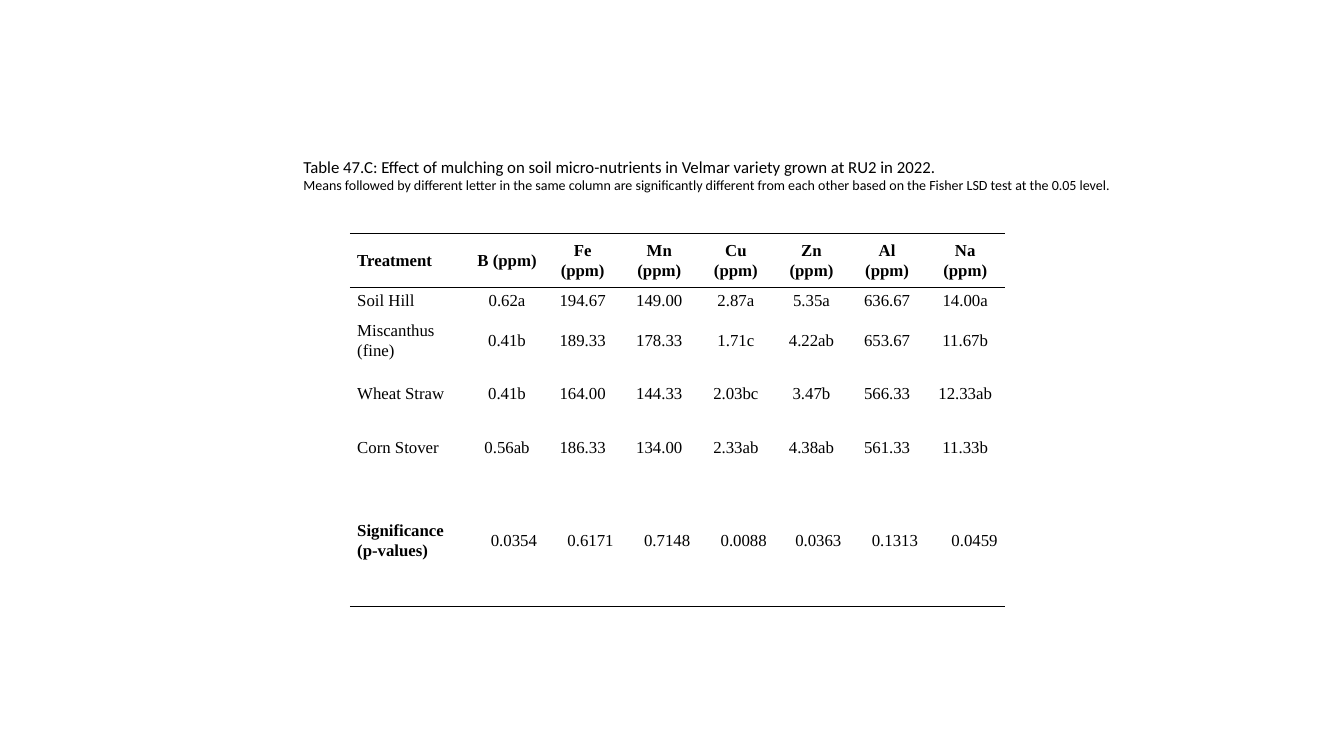
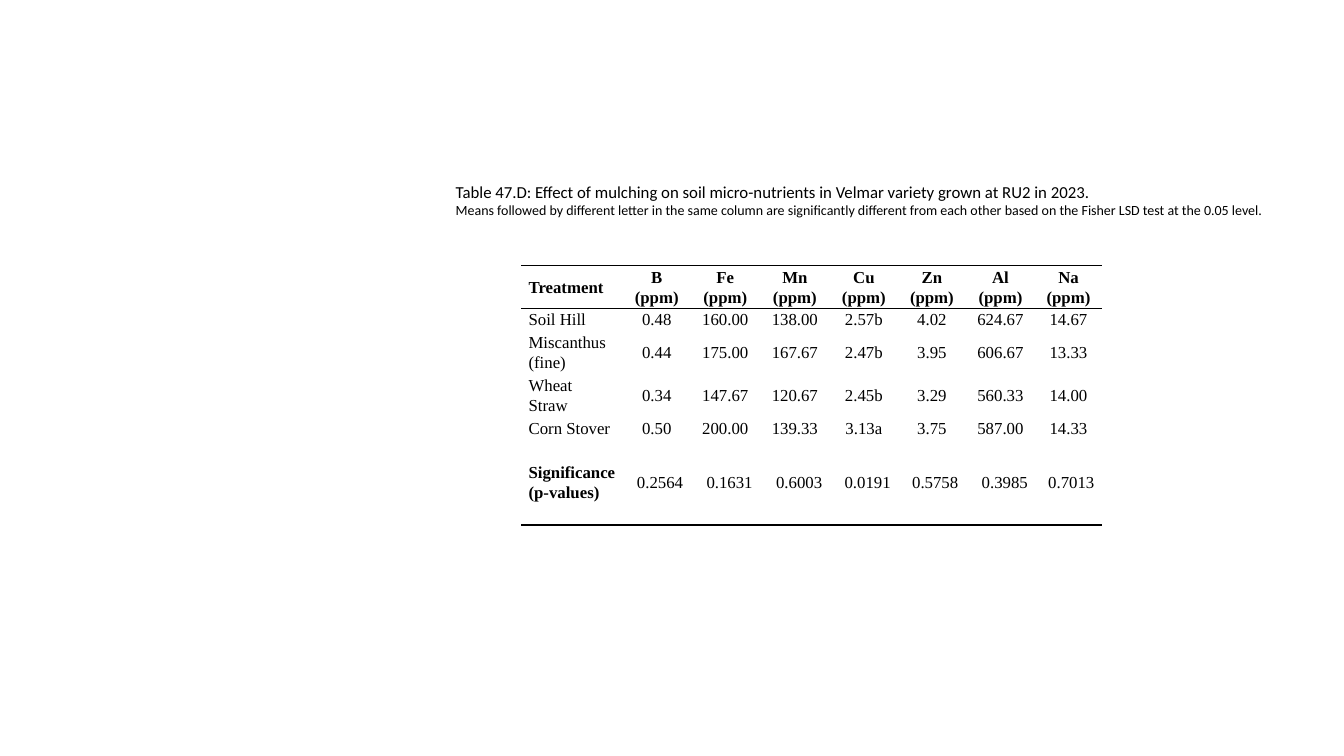
from dataclasses import dataclass

from lxml import etree
from pptx import Presentation
from pptx.dml.color import RGBColor
from pptx.enum.text import MSO_ANCHOR, MSO_AUTO_SIZE, PP_ALIGN
from pptx.oxml.ns import qn
from pptx.util import Inches, Pt

MIDDLE = MSO_ANCHOR.MIDDLE
NO_AUTOFIT = MSO_AUTO_SIZE.NONE
LEFT, CENTER, RIGHT = PP_ALIGN.LEFT, PP_ALIGN.CENTER, PP_ALIGN.RIGHT

INK = RGBColor(0x00, 0x00, 0x00)
SLIDE_WIDTH, SLIDE_HEIGHT = Inches(13.33), Inches(7.5)
TITLE_ONLY = 5
CAPTION_WIDTH, CAPTION_HEIGHT = 63, 6.7
PLAIN_STYLE = "{2D5ABB26-0587-4C30-8999-92F81FD0307C}"
EDGES = ("lnL", "lnR", "lnT", "lnB")

CAPTION_FONT = {"name": "Calibri", "size": Pt(12), "bold": False}
NOTE_FONT = {**CAPTION_FONT, "size": Pt(10)}
BODY_FONT = {"name": "Times New Roman", "size": Pt(12), "bold": False}
STRONG_FONT = {**BODY_FONT, "bold": True}
CELL_FORMAT = {
    "margin_left": Pt(5.3),
    "margin_right": Pt(5.3),
    "margin_top": 0,
    "margin_bottom": 0,
    "vertical_anchor": MIDDLE,
}
SPACER_SIZE = "1000"

NOTE = (
    "Means followed by different letter in the same column are significantly "
    "different from each other based on the Fisher LSD test at the 0.05 level."
)
HEADINGS = ("Treatment", *(f"{element} (ppm)" for element in
                           ("B", "Fe", "Mn", "Cu", "Zn", "Al", "Na")))
TREATMENTS = ("Soil Hill", "Miscanthus (fine)", "Wheat Straw", "Corn Stover")
SIGNIFICANCE = "Significance (p-values)"


@dataclass(frozen=True)
class NutrientTable:
    code: str
    year: int
    caption_at: tuple[float, float]
    table_at: tuple[float, float]
    columns: tuple[float, ...]
    rows: tuple[float, ...]
    means: tuple[tuple[str, ...], ...]
    p_values: tuple[str, ...]

    def lines(self) -> list[tuple[str, ...]]:
        blank = ("",) * len(HEADINGS)
        treatments = [(name, *values) for name, values in zip(TREATMENTS, self.means)]
        return [HEADINGS, *treatments, blank, (SIGNIFICANCE, *self.p_values), blank]


NUTRIENT_TABLES = (
    NutrientTable(
        code="47.C",
        year=2022,
        caption_at=(21.83, 19.8),
        table_at=(26.03, 30.93),
        columns=(1.19, 0.74, 0.76, 0.76, 0.76, 0.74, 0.76, 0.79),
        rows=(0.53, 0.26, 0.53, 0.53, 0.54, 0.26, 0.79, 0.26),
        means=(
            ("0.62a", "194.67", "149.00", "2.87a", "5.35a", "636.67", "14.00a"),
            ("0.41b", "189.33", "178.33", "1.71c", "4.22ab", "653.67", "11.67b"),
            ("0.41b", "164.00", "144.33", "2.03bc", "3.47b", "566.33", "12.33ab"),
            ("0.56ab", "186.33", "134.00", "2.33ab", "4.38ab", "561.33", "11.33b"),
        ),
        p_values=("0.0354", "0.6171", "0.7148", "0.0088", "0.0363", "0.1313", "0.0459"),
    ),
    NutrientTable(
        code="47.D",
        year=2023,
        caption_at=(33.16, 23.1),
        table_at=(38.78, 35.07),
        columns=(1.01, 0.67, 0.69, 0.69, 0.68, 0.67, 0.69, 0.66),
        rows=(0.43, 0.22, 0.43, 0.43, 0.22, 0.21, 0.43, 0.21),
        means=(
            ("0.48", "160.00", "138.00", "2.57b", "4.02", "624.67", "14.67"),
            ("0.44", "175.00", "167.67", "2.47b", "3.95", "606.67", "13.33"),
            ("0.34", "147.67", "120.67", "2.45b", "3.29", "560.33", "14.00"),
            ("0.50", "200.00", "139.33", "3.13a", "3.75", "587.00", "14.33"),
        ),
        p_values=("0.2564", "0.1631", "0.6003", "0.0191", "0.5758", "0.3985", "0.7013"),
    ),
)


def across(percent: float) -> int:
    return round(SLIDE_WIDTH * percent / 100)


def down(percent: float) -> int:
    return round(SLIDE_HEIGHT * percent / 100)


def apply(target, formats: dict) -> None:
    for name, value in formats.items():
        setattr(target, name, value)


def write(paragraph, text: str, font: dict, alignment, spacing: float) -> None:
    run = paragraph.add_run()
    run.text = text
    apply(run.font, font)
    run.font.color.rgb = INK
    apply(paragraph, {"alignment": alignment, "line_spacing": spacing})


def rule(cell, ruled: tuple[str, ...]) -> None:
    properties = cell._tc.get_or_add_tcPr()
    for position, edge in enumerate(EDGES):
        line = etree.Element(qn(f"a:{edge}"), w=str(Pt(1)))
        if edge in ruled:
            fill = etree.SubElement(line, qn("a:solidFill"))
            etree.SubElement(fill, qn("a:srgbClr"), val=str(INK))
        else:
            etree.SubElement(line, qn("a:noFill"))
        properties.insert(position, line)


def add_caption(slide, content: NutrientTable) -> None:
    caption = slide.shapes.title
    left, top = content.caption_at
    apply(caption, {
        "left": across(left),
        "top": down(top),
        "width": across(CAPTION_WIDTH),
        "height": down(CAPTION_HEIGHT),
    })
    frame = caption.text_frame
    apply(frame, {"word_wrap": True, "auto_size": NO_AUTOFIT, "vertical_anchor": MIDDLE})
    heading = (
        f"Table {content.code}: Effect of mulching on soil micro-nutrients "
        f"in Velmar variety grown at RU2 in {content.year}."
    )
    write(frame.paragraphs[0], heading, CAPTION_FONT, LEFT, 1.0)
    write(frame.add_paragraph(), NOTE, NOTE_FONT, LEFT, 1.0)


def fill_cell(cell, text: str, font: dict, alignment) -> None:
    apply(cell, CELL_FORMAT)
    cell.fill.background()
    paragraph = cell.text_frame.paragraphs[0]
    if text:
        write(paragraph, text, font, alignment, 1.07)
    else:
        etree.SubElement(paragraph._p, qn("a:endParaRPr"), sz=SPACER_SIZE)


def add_nutrients(slide, content: NutrientTable) -> None:
    lines = content.lines()
    left, top = content.table_at
    table = slide.shapes.add_table(
        len(lines), len(HEADINGS), across(left), down(top),
        Inches(sum(content.columns)), Inches(sum(content.rows)),
    ).table
    apply(table, {"first_row": False, "horz_banding": False})
    table._tbl.tblPr.find(qn("a:tableStyleId")).text = PLAIN_STYLE
    for column, width in zip(table.columns, content.columns):
        column.width = Inches(width)
    for row, height in zip(table.rows, content.rows):
        row.height = Inches(height)

    ruled = {0: ("lnT", "lnB"), 1: ("lnT",), len(lines) - 1: ("lnB",)}
    for row_index, line in enumerate(lines):
        is_significance = line[0] == SIGNIFICANCE
        for column_index, text in enumerate(line):
            is_label = column_index == 0
            strong = row_index == 0 or (is_significance and is_label)
            values_alignment = RIGHT if is_significance else CENTER
            cell = table.cell(row_index, column_index)
            fill_cell(cell, text, STRONG_FONT if strong else BODY_FONT,
                      LEFT if is_label else values_alignment)
            rule(cell, ruled.get(row_index, ()))


def main() -> None:
    deck = Presentation()
    apply(deck, {"slide_width": SLIDE_WIDTH, "slide_height": SLIDE_HEIGHT})
    for content in NUTRIENT_TABLES:
        slide = deck.slides.add_slide(deck.slide_layouts[TITLE_ONLY])
        add_nutrients(slide, content)
        add_caption(slide, content)
    deck.save("out.pptx")


if __name__ == "__main__":
    main()
